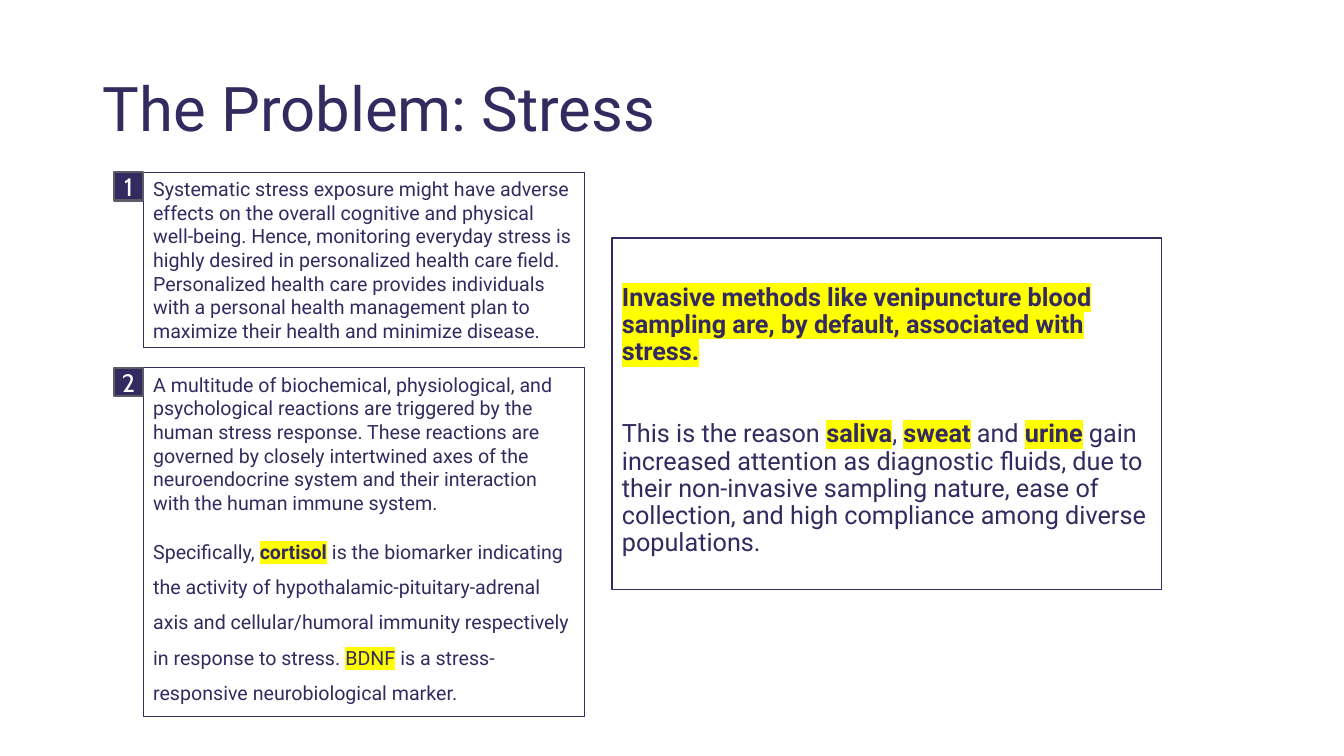
from lxml import etree
from pptx import Presentation
from pptx import util as u
from pptx.dml.color import RGBColor
from pptx.enum import shapes, text
from pptx.oxml.ns import qn

INK = RGBColor(0x34, 0x2A, 0x5F)
BADGE_EDGE = RGBColor(0x5A, 0x5C, 0x66)
WHITE = RGBColor(0xFF, 0xFF, 0xFF)
MARKER = RGBColor(0xFF, 0xFF, 0x00)

BADGE_WIDTH, BADGE_HEIGHT = 0.29, 0.28

STRESS = [
    ([("Systematic stress exposure might have adverse effects on the overall "
       "cognitive and physical well-being. Hence, monitoring everyday stress is "
       "highly desired in personalized health care field. Personalized health "
       "care provides individuals with a personal health management plan to "
       "maximize their health and minimize disease.", {})], {}),
]
BIOMARKERS = [
    ([("A multitude of biochemical, physiological, and psychological reactions "
       "are triggered by the human stress response. These reactions are governed "
       "by closely intertwined axes of the neuroendocrine system and their "
       "interaction with the human immune system.", {})], {}),
    ([("Specifically, ", {}),
      ("cortisol", {"bold": True, "marker": MARKER}),
      (" is the biomarker indicating the activity of "
       "hypothalamic-pituitary-adrenal axis and cellular/humoral immunity "
       "respectively in response to stress. ", {}),
      ("BDNF", {"marker": MARKER}),
      (" is a stress-responsive neurobiological marker.", {})],
     {"before": 10, "spacing": 1.5}),
]
SAMPLING = [
    ([("Invasive methods like venipuncture blood sampling are, by default, "
       "associated with stress.", {"bold": True, "marker": MARKER})],
     {"spacing": 0.9}),
    ([("This is the reason ", {}),
      ("saliva", {"bold": True, "marker": MARKER}),
      (", ", {}),
      ("sweat", {"bold": True, "marker": MARKER}),
      (" and ", {}),
      ("urine", {"bold": True, "marker": MARKER}),
      (" gain increased attention as diagnostic fluids, due to their "
       "non-invasive sampling nature, ease of collection, and high compliance "
       "among diverse populations.", {})],
     {"before": 39.5, "spacing": 0.9}),
]


def add_span(para, words, size=14, font="Roboto", color=INK, bold=False, marker=None):
    span = para.add_run()
    span.text = words
    span.font.size = u.Pt(size)
    span.font.name = font
    span.font.bold = bold
    span.font.color.rgb = color
    if marker is not None:
        highlight = etree.Element(qn("a:highlight"))
        etree.SubElement(highlight, qn("a:srgbClr"), val=str(marker))
        span.font._element.find(qn("a:solidFill")).addnext(highlight)


def write(frame, paragraphs, align=text.PP_ALIGN.LEFT,
          anchor=text.MSO_ANCHOR.TOP, **style):
    frame.word_wrap = True
    frame.vertical_anchor = anchor
    for index, (spans, layout) in enumerate(paragraphs):
        para = frame.add_paragraph() if index else frame.paragraphs[0]
        para.alignment = align
        para.space_before = u.Pt(layout.get("before", 0))
        para.line_spacing = layout.get("spacing", 1.0)
        for words, emphasis in spans:
            add_span(para, words, **style, **emphasis)


def add_box(page, left, top, width, height, edge, weight, fill=None):
    box = page.shapes.add_shape(
        shapes.MSO_SHAPE.RECTANGLE,
        *(u.Inches(value) for value in (left, top, width, height)))
    box.shadow.inherit = False
    if fill is None:
        box.fill.background()
    else:
        box.fill.solid()
        box.fill.fore_color.rgb = fill
    box.line.color.rgb = edge
    box.line.width = u.Pt(weight)
    return box


def add_title(page, left, top, width, height, words):
    box = page.shapes.add_textbox(
        *(u.Inches(value) for value in (left, top, width, height)))
    write(box.text_frame, [([(words, {})], {"spacing": 0.9})],
          anchor=text.MSO_ANCHOR.MIDDLE, size=44)


def add_numbered_panel(page, left, top, width, height, number, paragraphs):
    panel = add_box(page, left, top, width, height, INK, 0.75)
    write(panel.text_frame, paragraphs)
    badge = add_box(page, left - BADGE_WIDTH, top, BADGE_WIDTH, BADGE_HEIGHT,
                    BADGE_EDGE, 1.5, INK)
    frame = badge.text_frame
    frame.margin_left = frame.margin_right = 0
    frame.margin_top = frame.margin_bottom = 0
    write(frame, [([(str(number), {})], {})], align=text.PP_ALIGN.CENTER,
          anchor=text.MSO_ANCHOR.MIDDLE, size=18, font="Cabin", color=WHITE)


def add_conclusion(page, left, top, width, height, paragraphs):
    panel = add_box(page, left, top, width, height, INK, 1)
    panel.text_frame.margin_top = u.Inches(0.46)
    write(panel.text_frame, paragraphs, size=18)


def main():
    deck = Presentation()
    deck.slide_width = u.Inches(13.33)
    deck.slide_height = u.Inches(7.5)
    page = deck.slides.add_slide(deck.slide_layouts[6])
    add_title(page, 0.92, 0.38, 6.39, 1.45, "The Problem: Stress")
    panels = [(1.71, 1.74, STRESS), (3.65, 3.46, BIOMARKERS)]
    for number, (top, height, paragraphs) in enumerate(panels, 1):
        add_numbered_panel(page, 1.42, top, 4.38, height, number, paragraphs)
    add_conclusion(page, 6.07, 2.36, 5.45, 3.49, SAMPLING)
    deck.save("out.pptx")


if __name__ == "__main__":
    main()
